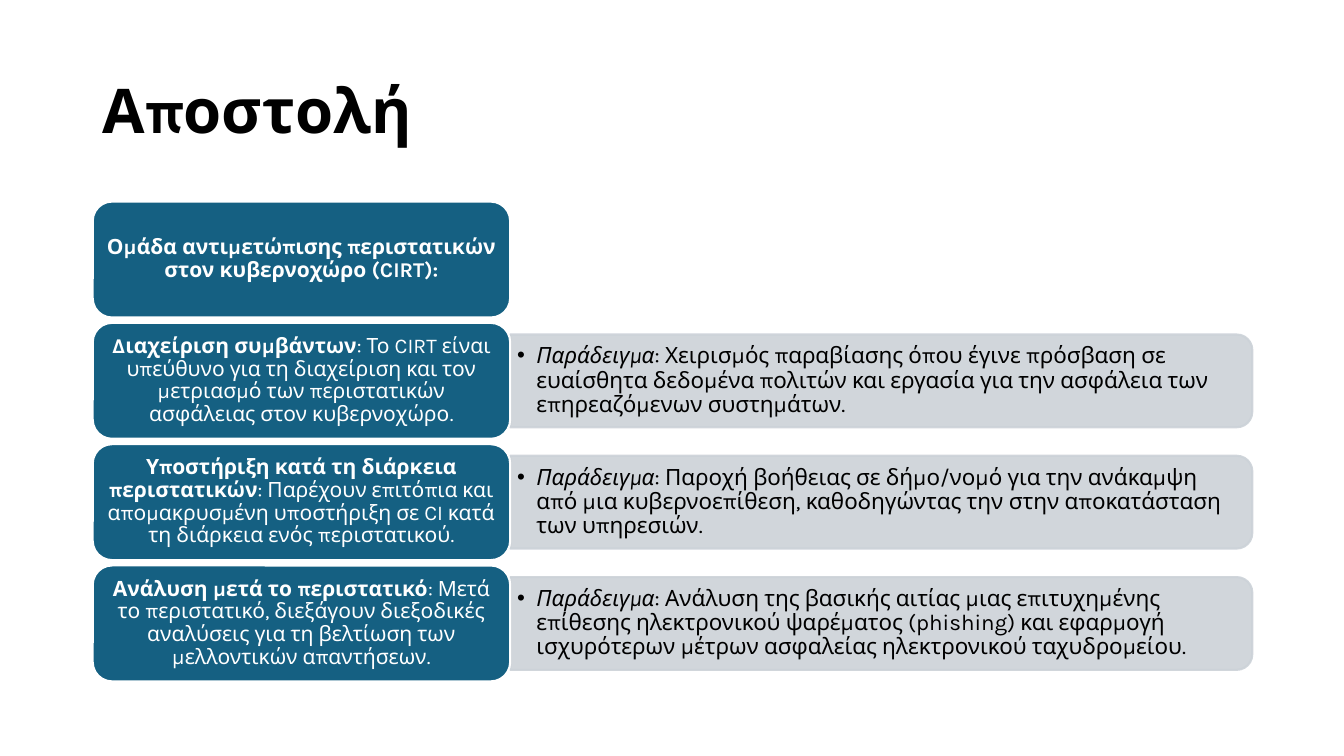
from lxml import etree
from pptx import Presentation
from pptx.dml.color import RGBColor
from pptx.enum.shapes import MSO_SHAPE
from pptx.enum.text import MSO_ANCHOR, PP_ALIGN
from pptx.oxml.ns import qn
from pptx.util import Inches, Pt

TITLE = "Αποστολή"
EXAMPLE_LABEL = "Παράδειγμα"
# Each row: bold heading, rest of the card text, example text
ROWS = [
    ("Ομάδα αντιμετώπισης περιστατικών στον κυβερνοχώρο (CIRT):", "", ""),
    (
        "Διαχείριση συμβάντων",
        ": Το CIRT είναι υπεύθυνο για τη διαχείριση και τον μετριασμό των "
        "περιστατικών ασφάλειας στον κυβερνοχώρο.",
        ": Χειρισμός παραβίασης όπου έγινε πρόσβαση σε ευαίσθητα δεδομένα πολιτών "
        "και εργασία για την ασφάλεια των επηρεαζόμενων συστημάτων.",
    ),
    (
        "Υποστήριξη κατά τη διάρκεια περιστατικών",
        ": Παρέχουν επιτόπια και απομακρυσμένη υποστήριξη σε CI κατά τη διάρκεια "
        "ενός περιστατικού.",
        ": Παροχή βοήθειας σε δήμο/νομό για την ανάκαμψη από μια κυβερνοεπίθεση, "
        "καθοδηγώντας την στην αποκατάσταση των υπηρεσιών.",
    ),
    (
        "Ανάλυση μετά το περιστατικό",
        ": Μετά το περιστατικό, διεξάγουν διεξοδικές αναλύσεις για τη βελτίωση "
        "των μελλοντικών απαντήσεων.",
        ": Ανάλυση της βασικής αιτίας μιας επιτυχημένης επίθεσης ηλεκτρονικού "
        "ψαρέματος (phishing) και εφαρμογή ισχυρότερων μέτρων ασφαλείας "
        "ηλεκτρονικού ταχυδρομείου.",
    ),
]

FONT = "Karla"
BLUE = RGBColor(0x15, 0x60, 0x82)
GRAY = RGBColor(0xCC, 0xD2, 0xD8)
WHITE = RGBColor(0xFF, 0xFF, 0xFF)
BLACK = RGBColor(0x00, 0x00, 0x00)

LEFT, ROWS_TOP, ROW_PITCH = 0.92, 2.0, 3.61 / 3
CARD_WIDTH, CARD_HEIGHT = 4.14, 1.15
PANEL_LEFT = LEFT + CARD_WIDTH
PANEL_WIDTH, PANEL_HEIGHT = 7.36, 0.92
EXAMPLE_WIDTH, EXAMPLE_HEIGHT = 7.32, 0.83


def set_frame(shape, side, edge):
    frame = shape.text_frame
    frame.word_wrap = True
    frame.vertical_anchor = MSO_ANCHOR.MIDDLE
    frame.margin_left = frame.margin_right = Inches(side)
    frame.margin_top = frame.margin_bottom = Inches(edge)
    paragraph = frame.paragraphs[0]
    paragraph.line_spacing = 0.9
    return paragraph


def add_run(paragraph, text, size, color, bold=False, italic=False):
    run = paragraph.add_run()
    run.text = text
    font = run.font
    font.name, font.size = FONT, Pt(size)
    font.bold, font.italic = bold, italic
    font.color.rgb = color


def add_box(slide, preset, left, top, width, height, fill, line):
    shape = slide.shapes.add_shape(
        preset, Inches(left), Inches(top), Inches(width), Inches(height))
    shape.shadow.inherit = False
    shape.fill.solid()
    shape.fill.fore_color.rgb = fill
    shape.line.color.rgb = line
    shape.line.width = Pt(1.5)
    return shape


def add_panel(slide, middle):
    """Gray bar behind an example: a top-rounded shape turned to the right."""
    center = PANEL_LEFT + PANEL_WIDTH / 2
    panel = add_box(slide, MSO_SHAPE.ROUND_2_SAME_RECTANGLE,
                    center - PANEL_HEIGHT / 2, middle - PANEL_WIDTH / 2,
                    PANEL_HEIGHT, PANEL_WIDTH, GRAY, GRAY)
    panel.rotation = 90
    for color in panel._element.spPr.iter(qn("a:srgbClr")):
        etree.SubElement(color, qn("a:alpha")).set("val", "90000")


def add_example(slide, middle, text):
    box = slide.shapes.add_textbox(
        Inches(PANEL_LEFT), Inches(middle - EXAMPLE_HEIGHT / 2),
        Inches(EXAMPLE_WIDTH), Inches(EXAMPLE_HEIGHT))
    paragraph = set_frame(box, 0.07, 0.03)
    properties = paragraph._p.get_or_add_pPr()
    properties.set("marL", str(Inches(0.19)))
    properties.set("indent", str(-Inches(0.19)))
    etree.SubElement(properties, qn("a:buFont")).set("typeface", "Arial")
    etree.SubElement(properties, qn("a:buChar")).set("char", "•")
    add_run(paragraph, EXAMPLE_LABEL, 16, BLACK, italic=True)
    add_run(paragraph, text, 16, BLACK)


def add_card(slide, top, heading, detail):
    card = add_box(slide, MSO_SHAPE.ROUNDED_RECTANGLE, LEFT, top,
                   CARD_WIDTH, CARD_HEIGHT, BLUE, WHITE)
    paragraph = set_frame(card, 0.06, 0.03)
    paragraph.alignment = PP_ALIGN.CENTER
    add_run(paragraph, heading, 15, WHITE, bold=True)
    if detail:
        add_run(paragraph, detail, 15, WHITE)


def main():
    presentation = Presentation()
    presentation.slide_width = Inches(13.33)
    presentation.slide_height = Inches(7.5)
    slide = presentation.slides.add_slide(presentation.slide_layouts[6])

    title = slide.shapes.add_textbox(
        Inches(LEFT), Inches(0.4), Inches(11.5), Inches(1.45))
    add_run(set_frame(title, 0.1, 0.05), TITLE, 44, BLACK, bold=True)

    for index, (heading, detail, example) in enumerate(ROWS):
        top = ROWS_TOP + index * ROW_PITCH
        if example:
            middle = top + CARD_HEIGHT / 2
            add_panel(slide, middle)
            add_example(slide, middle, example)
        add_card(slide, top, heading, detail)

    presentation.save("out.pptx")


if __name__ == "__main__":
    main()
